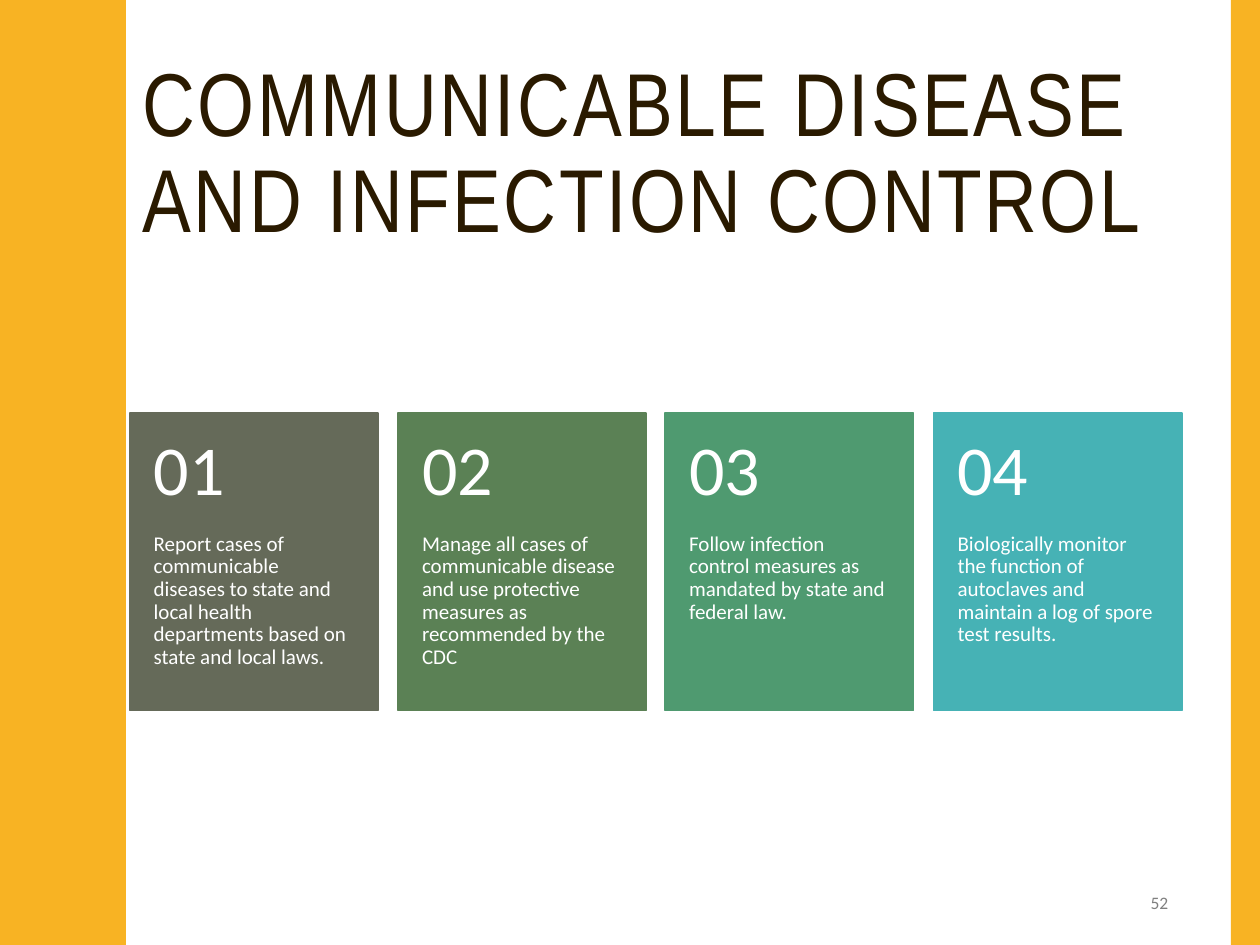
from pptx import Presentation
from pptx.dml.color import RGBColor as RGB
from pptx.enum.shapes import MSO_SHAPE as Shape
from pptx.enum.text import MSO_ANCHOR as Anchor, MSO_AUTO_SIZE as Fit, PP_ALIGN as Align
from pptx.util import Inches, Pt

DARK = RGB(0x2A, 0x1A, 0x00)
GOLD = RGB(0xF8, 0xB3, 0x23)
GRAY = RGB(0x80, 0x80, 0x80)
WHITE = RGB(0xFF, 0xFF, 0xFF)

TITLE = "COMMUNICABLE DISEASE AND INFECTION CONTROL"
NUMBER = "52"
CARDS = [
    ("01", RGB(0x65, 0x6A, 0x59),
     "Report cases of communicable diseases to state and local health "
     "departments based on state and local laws."),
    ("02", RGB(0x5B, 0x81, 0x55),
     "Manage all cases of communicable disease and use protective "
     "measures as recommended by the CDC"),
    ("03", RGB(0x4F, 0x9A, 0x70),
     "Follow infection control measures as mandated by state and federal law."),
    ("04", RGB(0x46, 0xB2, 0xB5),
     "Biologically monitor the function of autoclaves and maintain a log "
     "of spore test results."),
]

LEFT, TOP, STEP = 1.03, 3.28, 2.127
CARD_W, CARD_H, HEAD_H = 1.97, 2.36, 0.95

# One swing of the wavy edge, from trough to crest, as (x, y)
SWING = [(0.58, 0), (0.58, 0.07), (0.59, 0.14), (0.6, 0.2), (0.61, 0.25),
         (0.62, 0.29), (0.64, 0.33), (0.65, 0.38), (0.67, 0.42), (0.68, 0.46),
         (0.7, 0.5), (0.71, 0.55), (0.72, 0.61), (0.72, 0.68), (0.73, 0.75)]
WAVE, WAVES = 1.5, 5


def paint(shape, color, line=False):
    shape.shadow.inherit = False
    shape.fill.solid()
    shape.fill.fore_color.rgb = color
    if line:
        shape.line.color.rgb = color
        shape.line.width = Pt(1)
    else:
        shape.line.fill.background()


def add_rect(shapes, box, color, line=False):
    rect = shapes.add_shape(Shape.RECTANGLE, *map(Inches, box))
    paint(rect, color, line)


def add_wave(shapes):
    back = [(x, WAVE - y) for x, y in SWING[-2::-1]]
    edge = [(x, y + i * WAVE) for i in range(WAVES) for x, y in SWING + back]
    pen = shapes.build_freeform(0, 0, scale=Inches(1))
    pen.add_line_segments(edge + [(0, WAVE * WAVES)], close=True)
    paint(pen.convert_to_shape(), GOLD)


def set_text(shape, text, size, color, font="Calibri", frame=None, para=None):
    """Write one paragraph; frame and para hold extra format values."""
    body = shape.text_frame
    body.text = text
    line = body.paragraphs[0]
    looks = [
        (body, {"word_wrap": True, "auto_size": Fit.NONE, **(frame or {})}),
        (line, para or {}),
        (line.runs[0].font, {"name": font, "size": Pt(size)}),
    ]
    for part, values in looks:
        for name, value in values.items():
            setattr(part, name, value)
    line.runs[0].font.color.rgb = color
    return line.runs[0]


def insets(side, top, bottom):
    return {"margin_left": Inches(side), "margin_right": Inches(side),
            "margin_top": Inches(top), "margin_bottom": Inches(bottom)}


def add_card(shapes, left, head, color, text):
    add_rect(shapes, (left, TOP, CARD_W, CARD_H), color, line=True)
    parts = [
        (text, 12, TOP + HEAD_H, CARD_H - HEAD_H, insets(0.19, 0, 0.36)),
        (head, 40, TOP, HEAD_H,
         {"vertical_anchor": Anchor.MIDDLE, **insets(0.19, 0.18, 0.18)}),
    ]
    for words, size, top, height, frame in parts:
        box = shapes.add_textbox(*map(Inches, (left, top, CARD_W, height)))
        set_text(box, words, size, WHITE, frame=frame, para={"line_spacing": 0.9})


def main():
    deck = Presentation()
    deck.slide_width, deck.slide_height = Inches(10), Inches(7.5)
    slide = deck.slides.add_slide(deck.slide_layouts[5])
    shapes = slide.shapes
    middle = {"vertical_anchor": Anchor.MIDDLE}

    title = shapes.title
    title.left, title.top, title.width, title.height = map(
        Inches, (1.03, 0.42, 8.35, 1.63))
    run = set_text(title, TITLE, 51, DARK, "Arial Narrow", middle,
                   {"line_spacing": 0.9, "alignment": Align.LEFT})
    run.font._element.set("spc", "150")

    add_wave(shapes)
    add_rect(shapes, (9.77, 0, 0.23, 7.5), GOLD)
    page = shapes.add_textbox(*map(Inches, (7.06, 6.97, 2.31, 0.38)))
    set_text(page, NUMBER, 10, GRAY, frame=middle, para={"alignment": Align.RIGHT})

    for i, card in enumerate(CARDS):
        add_card(shapes, round(LEFT + i * STEP, 2), *card)
    deck.save("out.pptx")


if __name__ == "__main__":
    main()
